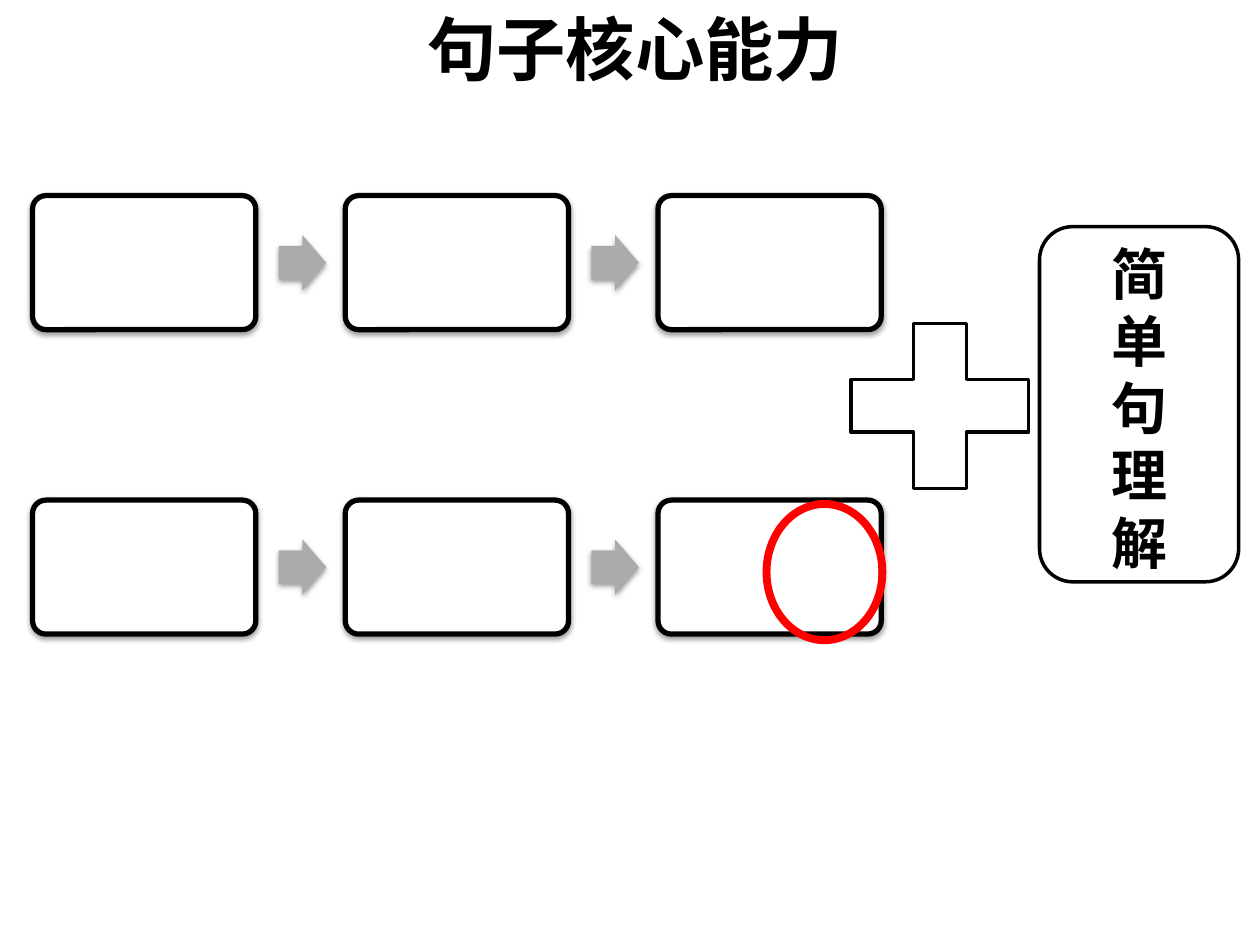
from lxml import etree
from pptx import Presentation
from pptx.dml.color import RGBColor
from pptx.enum.shapes import MSO_SHAPE
from pptx.enum.text import MSO_ANCHOR, PP_ALIGN
from pptx.oxml.ns import qn
from pptx.util import Pt

ROUNDED = MSO_SHAPE.ROUNDED_RECTANGLE
ARROW = MSO_SHAPE.RIGHT_ARROW
PLUS = MSO_SHAPE.MATH_PLUS
OVAL = MSO_SHAPE.OVAL
MIDDLE, TOP = MSO_ANCHOR.MIDDLE, MSO_ANCHOR.TOP
CENTER = PP_ALIGN.CENTER

BLACK = RGBColor(0x00, 0x00, 0x00)
WHITE = RGBColor(0xFF, 0xFF, 0xFF)
GRAY = RGBColor(0xAB, 0xAB, 0xAB)
RED = RGBColor(0xFF, 0x00, 0x00)
FONT = "Noto Sans CJK SC"

# Content
TITLE = "句子核心能力"
SKILL = "简单句理解"

# Layout in points: left, top, width, height
TITLE_BOX = (18, 6.2, 689.8, 41.8)
PLUS_BOX = (468, 167.8, 138.2, 128.2)
SKILL_BOX = (594, 129.5, 113.8, 203)
SKILL_TEXT_BOX = (618.6, 133.2, 64.8, 200.9)
MARK_BOX = (438, 288, 66.2, 77.8)
ROW_TOPS = (111.8, 285.8)
STEP_COUNT = 3
STEP_LEFT, STEP_PITCH = 18.6, 178.7
STEP_WIDTH, STEP_HEIGHT = 127.6, 76.6
ARROW_GAP = 13
ARROW_WIDTH, ARROW_HEIGHT = 27.2, 31.7


def add_shadow(shape):
    effects = shape._element.spPr.find(qn("a:effectLst"))
    shadow = etree.SubElement(effects, qn("a:outerShdw"), blurRad=str(Pt(3.1)),
                              dist=str(Pt(1.6)), dir="5400000", rotWithShape="0")
    color = etree.SubElement(shadow, qn("a:srgbClr"), val=str(BLACK))
    etree.SubElement(color, qn("a:alpha"), val="38000")


def add_shape(shapes, kind, box, fill=None, line=None, width=2,
              adjustments=(), shadow=False):
    shape = shapes.add_shape(kind, *map(Pt, box))
    shape.shadow.inherit = False
    for index, value in enumerate(adjustments):
        shape.adjustments[index] = value
    if fill is None:
        shape.fill.background()
    else:
        shape.fill.solid()
        shape.fill.fore_color.rgb = fill
    if line is None:
        shape.line.fill.background()
    else:
        shape.line.color.rgb = line
        shape.line.width = Pt(width)
    if shadow:
        add_shadow(shape)


def add_text(shapes, text, box, size, anchor, spacing=None):
    frame = shapes.add_textbox(*map(Pt, box)).text_frame
    frame.word_wrap = True
    frame.vertical_anchor = anchor
    paragraph = frame.paragraphs[0]
    paragraph.alignment = CENTER
    if spacing:
        paragraph.line_spacing = Pt(spacing)
    run = paragraph.add_run()
    run.text = text
    run.font.name = FONT
    run.font.size = Pt(size)
    run.font.bold = True
    run.font.color.rgb = BLACK
    etree.SubElement(run.font._element, qn("a:ea"), typeface=FONT)


def add_step_row(slide, top):
    shapes = slide.shapes.add_group_shape().shapes
    for index in range(STEP_COUNT):
        left = STEP_LEFT + index * STEP_PITCH
        add_shape(shapes, ROUNDED, (left, top, STEP_WIDTH, STEP_HEIGHT), fill=WHITE,
                  line=BLACK, width=3, adjustments=(0.1,), shadow=True)
        if index < STEP_COUNT - 1:
            arrow_left = left + STEP_WIDTH + ARROW_GAP
            arrow_top = top + (STEP_HEIGHT - ARROW_HEIGHT) / 2
            add_shape(shapes, ARROW, (arrow_left, arrow_top, ARROW_WIDTH, ARROW_HEIGHT),
                      fill=GRAY, adjustments=(0.6, 0.5), shadow=True)


def main():
    presentation = Presentation()
    presentation.slide_width, presentation.slide_height = Pt(720), Pt(540)
    slide = presentation.slides.add_slide(presentation.slide_layouts[6])

    # Title
    add_text(slide.shapes, TITLE, TITLE_BOX, 39.6, MIDDLE)

    # Two rows of steps joined by arrows
    for top in ROW_TOPS:
        add_step_row(slide, top)

    # Plus sign and the added skill, one character a line
    add_shape(slide.shapes, PLUS, PLUS_BOX, line=BLACK)
    skill = slide.shapes.add_group_shape().shapes
    add_shape(skill, ROUNDED, SKILL_BOX, line=BLACK)
    add_text(skill, SKILL, SKILL_TEXT_BOX, 32, TOP, spacing=38.4)

    # Red ring on the last step
    add_shape(slide.shapes, OVAL, MARK_BOX, line=RED, width=4.5)

    presentation.save("out.pptx")


if __name__ == "__main__":
    main()
